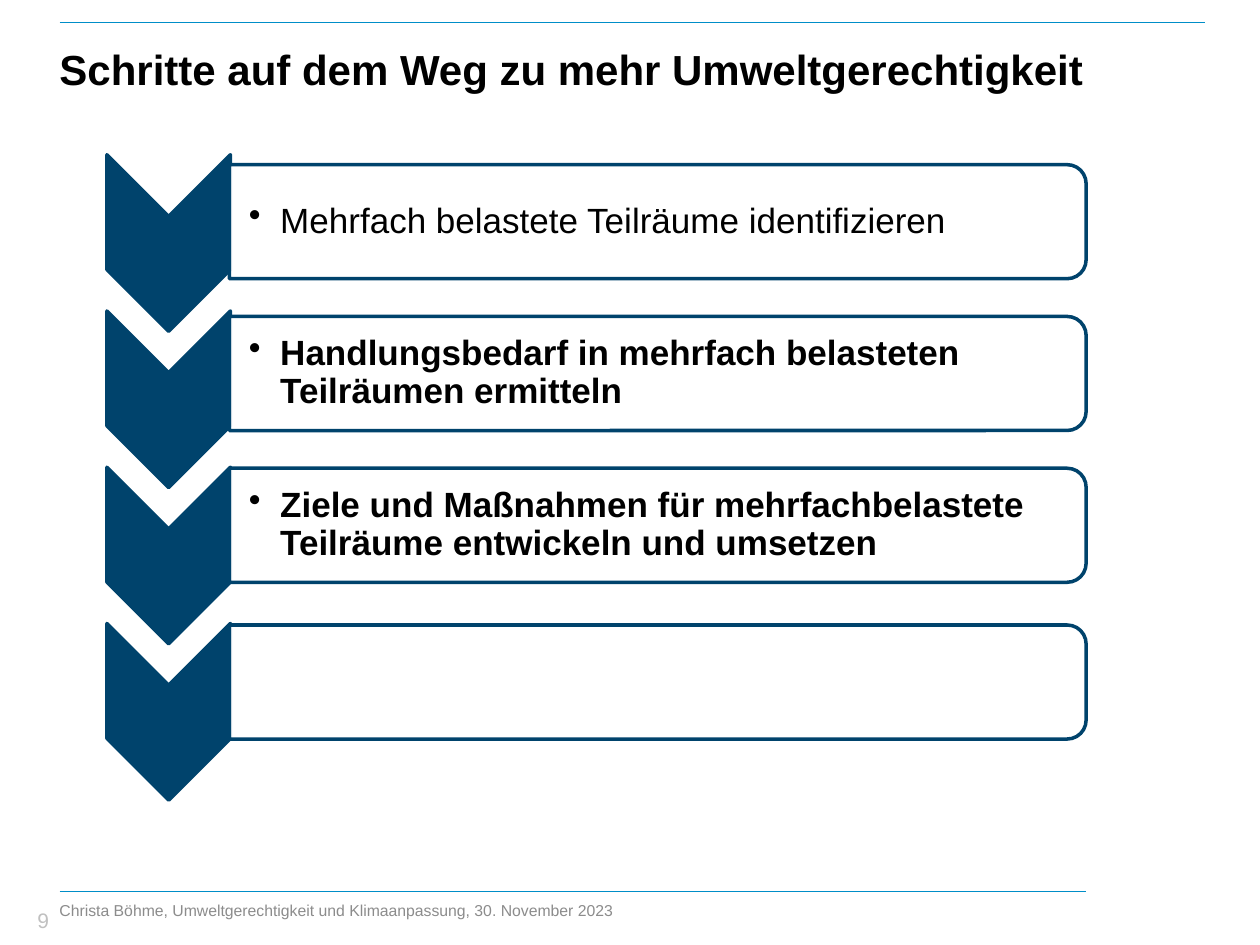
from dataclasses import dataclass

from lxml.etree import SubElement
from pptx import Presentation
from pptx.dml.color import RGBColor as RGB
from pptx.enum.shapes import MSO_CONNECTOR as CONNECTOR, MSO_SHAPE as SHAPE
from pptx.enum.text import MSO_ANCHOR as ANCHOR, PP_ALIGN as ALIGN
from pptx.oxml.ns import qn
from pptx.util import Cm, Pt


@dataclass(frozen=True)
class Theme:
    font: str = "Arial"
    text: RGB = RGB(0x00, 0x00, 0x00)
    navy: RGB = RGB(0x00, 0x43, 0x6C)
    rule: RGB = RGB(0x00, 0x8E, 0xC8)
    panel: RGB = RGB(0xFF, 0xFF, 0xFF)
    footer: RGB = RGB(0x8C, 0x8C, 0x8C)
    number: RGB = RGB(0xC0, 0xC0, 0xC0)
    title_size: int = 24
    step_size: int = 20
    number_size: int = 12
    footer_size: int = 9


THEME = Theme()

# Centre of each panel from the top (cm), its text, and whether it is bold
STEPS = [
    (4.47, "Mehrfach belastete Teilräume identifizieren", False),
    (7.53, "Handlungsbedarf in mehrfach belasteten Teilräumen ermitteln", True),
    (10.59, "Ziele und Maßnahmen für mehrfachbelastete Teilräume "
            "entwickeln und umsetzen", True),
    (13.75, None, False),
]
CHEVRON_X, CHEVRON_Y, CHEVRON_STEP = 3.4, 4.9, 3.15
PANEL_X = 13.26


def add_text(slide, box, text, size, color, bold=False, anchor=ANCHOR.TOP,
             align=ALIGN.LEFT, spacing=None, wrap=True, insets=(0, 0)):
    sp = slide.shapes.add_textbox(*map(Cm, box))
    tf = sp.text_frame
    tf.word_wrap = wrap
    tf.vertical_anchor = anchor
    left, other = insets
    tf.margin_left = Cm(left)
    tf.margin_top = tf.margin_right = tf.margin_bottom = Cm(other)
    p = tf.paragraphs[0]
    p.alignment = align
    if spacing:
        p.line_spacing = spacing
    r = p.add_run()
    r.text = text
    r.font.name = THEME.font
    r.font.size = Pt(size)
    r.font.bold = bold
    r.font.color.rgb = color
    return p


def add_bullet(p, indent):
    pPr = p._p.get_or_add_pPr()
    pPr.set("marL", str(Cm(indent)))
    pPr.set("indent", str(-Cm(indent)))
    after = SubElement(pPr, qn("a:spcAft"))
    SubElement(after, qn("a:spcPct"), val="15000")
    SubElement(pPr, qn("a:buChar"), char="•")


def add_rule(slide, x1, x2, y):
    line = slide.shapes.add_connector(
        CONNECTOR.STRAIGHT, Cm(x1), Cm(y), Cm(x2), Cm(y))
    line.line.color.rgb = THEME.rule
    line.line.width = Pt(0.5)
    SubElement(line._element.spPr, qn("a:effectLst"))


def add_turned_shape(slide, kind, center_x, center_y, width, height, fill):
    """Place a shape by its centre and turn it a quarter clockwise."""
    sp = slide.shapes.add_shape(
        kind, Cm(center_x - width / 2), Cm(center_y - height / 2),
        Cm(width), Cm(height))
    sp.rotation = 90
    sp.shadow.inherit = False
    sp.fill.solid()
    sp.fill.fore_color.rgb = fill
    sp.line.color.rgb = THEME.navy
    sp.line.width = Pt(2)
    SubElement(sp.line._ln, qn("a:round"))
    return sp


def add_step(slide, index, center_y, text, bold):
    add_turned_shape(slide, SHAPE.CHEVRON, CHEVRON_X,
                     CHEVRON_Y + index * CHEVRON_STEP, 3.56, 2.49, THEME.navy)
    panel = add_turned_shape(slide, SHAPE.ROUND_2_SAME_RECTANGLE, PANEL_X,
                             center_y, 2.3, 17.27, THEME.panel)
    color = panel._element.spPr.find(qn("a:solidFill"))[0]
    SubElement(color, qn("a:alpha"), val="90000")
    if text:
        height = 2.08
        p = add_text(slide, (4.62, center_y - height / 2, 17.15, height), text,
                     THEME.step_size, THEME.text, bold, ANCHOR.MIDDLE,
                     spacing=0.9, insets=(0.4, 0.03))
        add_bullet(p, 0.63)


def main():
    prs = Presentation()
    prs.slide_width, prs.slide_height = Cm(25.4), Cm(19.05)
    slide = prs.slides.add_slide(prs.slide_layouts[6])

    # Page frame
    add_text(slide, (0.1, 17.91, 0.89, 0.89), "9", THEME.number_size,
             THEME.number, anchor=ANCHOR.BOTTOM, align=ALIGN.RIGHT, wrap=False)
    add_rule(slide, 1.2, 21.9, 17.98)
    add_rule(slide, 1.2, 24.3, 0.46)

    # Title and footer
    add_text(slide, (1.2, 0.56, 23.1, 1.55),
             "Schritte auf dem Weg zu mehr Umweltgerechtigkeit",
             THEME.title_size, THEME.text, True, ANCHOR.MIDDLE, spacing=1.1)
    add_text(slide, (1.2, 18.16, 20.7, 0.86),
             "Christa Böhme, Umweltgerechtigkeit und Klimaanpassung, "
             "30. November 2023", THEME.footer_size, THEME.footer)

    # Chevron list
    for i, step in enumerate(STEPS):
        add_step(slide, i, *step)

    prs.save("out.pptx")


if __name__ == "__main__":
    main()
